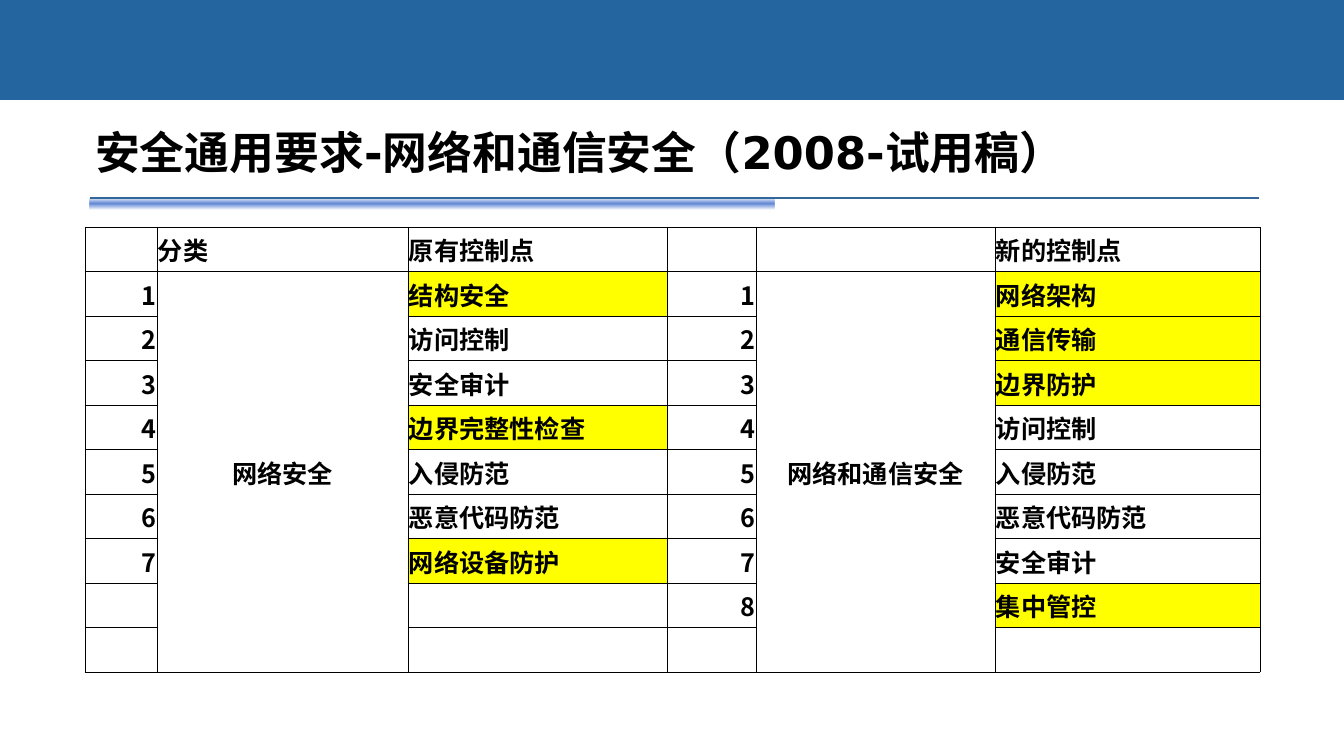
"""Build the network and communication security comparison slide."""
from pptx import Presentation
from pptx import util as u
from pptx.dml import color
from pptx.enum import shapes, text
from pptx.oxml import parse_xml
from pptx.oxml.ns import nsdecls, qn

PX = u.Inches(1) / 100.8
BLACK, YELLOW = "000000", "FFFF00"
CJK = "Noto Sans CJK SC"
LEFT, CENTER, RIGHT = text.PP_ALIGN.LEFT, text.PP_ALIGN.CENTER, text.PP_ALIGN.RIGHT

TITLE = "安全通用要求-网络和通信安全（2008-试用稿）"
COLUMNS = [72, 251, 259, 89, 239, 265]
ALIGNS = [RIGHT, CENTER, LEFT] * 2
HEADER = ["", "分类", "原有控制点", "", "", "新的控制点"]
CATEGORIES = {1: "网络安全", 4: "网络和通信安全"}
OLD = ["结构安全", "访问控制", "安全审计", "边界完整性检查", "入侵防范", "恶意代码防范", "网络设备防护"]
NEW = ["网络架构", "通信传输", "边界防护", "访问控制", "入侵防范", "恶意代码防范", "安全审计", "集中管控"]
CHANGED = {2: {"结构安全", "边界完整性检查", "网络设备防护"},
           5: {"网络架构", "通信传输", "边界防护", "集中管控"}}
BODY_ROWS = 9


def px(n):
    """Turn pixels into EMU."""
    return u.Emu(round(n * PX))


def rgb(value):
    """Turn a hex string into a colour."""
    return color.RGBColor.from_string(value)


def apply(obj, fmt):
    """Set each attribute named in a dict."""
    for name, value in fmt.items():
        setattr(obj, name, value)


def write(p, content, size, latin, align=LEFT):
    """Put one bold black run into a paragraph."""
    p.alignment = align
    r = p.add_run()
    r.text = content
    apply(r.font, {"size": u.Pt(size), "bold": True, "name": latin})
    r.font.color.rgb = rgb(BLACK)
    latin_el = r.font._element.find(qn("a:latin"))
    latin_el.addnext(parse_xml(f'<a:ea {nsdecls("a")} typeface="{CJK}"/>'))


def add_rect(s, x, y, w, h):
    """Add a plain rectangle without outline or shadow."""
    sp = s.shapes.add_shape(shapes.MSO_SHAPE.RECTANGLE, px(x), px(y), px(w), px(h))
    sp.shadow.inherit = False
    sp.line.fill.background()
    return sp


def add_band(s, x, y, w, h):
    """Draw the blue band at the top."""
    band = add_rect(s, x, y, w, h)
    band.fill.solid()
    band.fill.fore_color.rgb = rgb("25659F")


def add_rule(s, x, y, w, h):
    """Draw the thin rule with its soft bar below the title."""
    bar = add_rect(s, x, y, w * 684 // 1169, h)
    bar.fill.background()
    stops = "".join(
        f'<a:gs pos="{pos}"><a:srgbClr val="{value}"><a:alpha val="{alpha}"/></a:srgbClr></a:gs>'
        for pos, value, alpha in [(0, "5781D5", 0), (50000, "6387D6", 100000), (100000, "5781D5", 0)])
    props = bar._element.spPr
    props.replace(props.find(qn("a:noFill")), parse_xml(
        f'<a:gradFill {nsdecls("a")} rotWithShape="1"><a:gsLst>{stops}</a:gsLst>'
        '<a:lin ang="5400000" scaled="0"/></a:gradFill>'))
    rule = s.shapes.add_connector(shapes.MSO_CONNECTOR.STRAIGHT, px(x), px(y), px(x + w), px(y))
    rule.line.width = u.Pt(0.75)
    rule.line.color.rgb = rgb("336699")
    rule._element.spPr.append(parse_xml(f'<a:effectLst {nsdecls("a")}/>'))


def add_title(s, x, y, w, h):
    """Place and fill the title placeholder."""
    title = s.shapes.title
    s.shapes._spTree.append(title._element)
    apply(title, {"left": px(x), "top": px(y), "width": px(w), "height": px(h)})
    tf = title.text_frame
    apply(tf, {"word_wrap": True, "auto_size": text.MSO_AUTO_SIZE.NONE,
               "vertical_anchor": text.MSO_ANCHOR.BOTTOM, "margin_left": px(10),
               "margin_right": px(10), "margin_top": 0, "margin_bottom": 0})
    write(tf.paragraphs[0], TITLE, 32, "DejaVu Sans")


def table_rows():
    """Return the header and numbered rows of cell texts."""
    rows = [HEADER]
    for i in range(BODY_ROWS):
        row = []
        for points in (OLD, NEW):
            row += [str(i + 1), "", points[i]] if i < len(points) else ["", "", ""]
        rows.append(row)
    for col, name in CATEGORIES.items():
        rows[1][col] = name
    return rows


def format_cell(cell, content, align, marked):
    """Give a cell its borders, fill and text."""
    apply(cell, {"vertical_anchor": text.MSO_ANCHOR.MIDDLE, "margin_left": px(1),
                 "margin_right": px(1), "margin_top": px(1), "margin_bottom": 0})
    props = cell._tc.get_or_add_tcPr()
    for side in ("lnL", "lnR", "lnT", "lnB"):
        props.append(parse_xml(
            f'<a:{side} {nsdecls("a")} w="{u.Pt(0.5)}"><a:solidFill>'
            f'<a:srgbClr val="{BLACK}"/></a:solidFill></a:{side}>'))
    if marked:
        cell.fill.solid()
        cell.fill.fore_color.rgb = rgb(YELLOW)
    else:
        cell.fill.background()
    if content:
        write(cell.text_frame.paragraphs[0], content, 18, CJK, align)


def add_comparison(s, x, y, w, h):
    """Build the table of old and new control points."""
    rows = table_rows()
    frame = s.shapes.add_table(len(rows), len(COLUMNS), px(x), px(y), px(w), px(h))
    table = frame.table
    apply(table, {"first_row": False, "horz_banding": False})
    for column, width in zip(table.columns, COLUMNS):
        column.width = px(w * width / sum(COLUMNS))
    for i, row in enumerate(rows):
        table.rows[i].height = px(h / len(rows))
        for j, content in enumerate(row):
            align = ALIGNS[j] if i else LEFT
            format_cell(table.cell(i, j), content, align, content in CHANGED.get(j, ()))
    for col in CATEGORIES:
        table.cell(1, col).merge(table.cell(BODY_ROWS, col))


def main():
    """Build and save the slide."""
    prs = Presentation()
    apply(prs, {"slide_width": px(1344), "slide_height": px(756)})
    s = prs.slides.add_slide(prs.slide_layouts[5])
    add_rule(s, 90, 198, 1169, 12)
    add_band(s, 0, 0, 1344, 100)
    add_title(s, 85, 44, 1039, 134)
    add_comparison(s, 85, 227, 1175, 445)
    prs.save("out.pptx")


if __name__ == "__main__":
    main()
